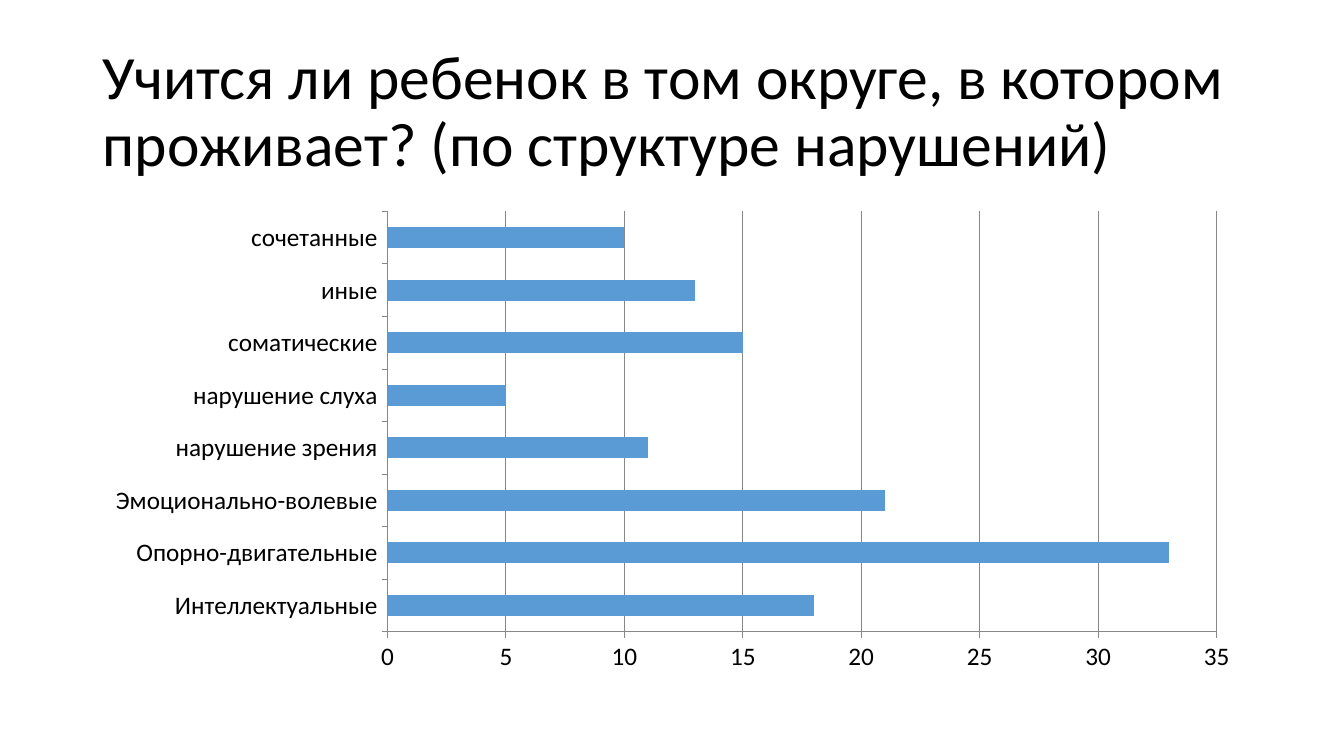
from pptx import Presentation
from pptx.chart.data import CategoryChartData as ChartData
from pptx.dml.color import RGBColor as Rgb
from pptx.enum.chart import XL_CHART_TYPE as Kind, XL_TICK_MARK as Tick
from pptx.enum.text import MSO_ANCHOR as Anchor, MSO_AUTO_SIZE as Fit, PP_ALIGN as Align
from pptx.util import Inches, Pt

WIDE, HIGH = 13.33, 7.5
LEFT, SPAN = 0.069, 0.863  # shares of the slide width

COUNTS = {
    "Интеллектуальные": 18,
    "Опорно-двигательные": 33,
    "Эмоционально-волевые": 21,
    "нарушение зрения": 11,
    "нарушение слуха": 5,
    "соматические": 15,
    "иные": 13,
    "сочетанные": 10,
}


def tint(code):
    return Rgb.from_string(code)


class Page:
    face, ink, bar, rule = "Calibri", "000000", "5B9BD5", "878787"

    def __init__(self, deck):
        self.slide = deck.slides.add_slide(deck.slide_layouts[5])

    def box(self, x, y, w, h):
        return Inches(x * WIDE), Inches(y * HIGH), Inches(w * WIDE), Inches(h * HIGH)

    def style(self, font, size):
        font.name, font.size, font.bold = self.face, Pt(size), False
        font.color.rgb = tint(self.ink)

    def stroke(self, line):
        line.color.rgb = tint(self.rule)
        line.width = Pt(0.75)

    def title(self, text, area, size):
        shape = self.slide.shapes.title
        shape.left, shape.top, shape.width, shape.height = self.box(*area)
        frame = shape.text_frame
        frame.text = text
        frame.word_wrap = True
        frame.auto_size = Fit.NONE
        frame.vertical_anchor = Anchor.MIDDLE
        para = frame.paragraphs[0]
        para.alignment, para.line_spacing = Align.LEFT, 0.9
        self.style(para.font, size)

    def bars(self, counts, area, size):
        data = ChartData()
        data.categories = list(counts)
        data.add_series("Series 1", list(counts.values()))
        chart = self.slide.shapes.add_chart(
            Kind.BAR_CLUSTERED, *self.box(*area), data).chart
        chart.has_legend = chart.has_title = False
        self.style(chart.font, size)

        # Bars
        plot = chart.plots[0]
        plot.gap_width, plot.vary_by_categories = 150, False
        fill = plot.series[0].format.fill
        fill.solid()
        fill.fore_color.rgb = tint(self.bar)

        # Axes and grid lines
        for axis in (chart.category_axis, chart.value_axis):
            axis.major_tick_mark, axis.minor_tick_mark = Tick.OUTSIDE, Tick.NONE
            self.stroke(axis.format.line)
        scale = chart.value_axis
        scale.minimum_scale, scale.maximum_scale, scale.major_unit = 0, 35, 5
        scale.has_major_gridlines = True
        self.stroke(scale.major_gridlines.format.line)


def main():
    deck = Presentation()
    deck.slide_width, deck.slide_height = Inches(WIDE), Inches(HIGH)
    page = Page(deck)
    page.title("Учится ли ребенок в том округе, в котором проживает? "
               "(по структуре нарушений)", (LEFT, 0.053, SPAN, 0.193), 44)
    page.bars(COUNTS, (LEFT, 0.267, SPAN, 0.635), 18)
    deck.save("out.pptx")


if __name__ == "__main__":
    main()
